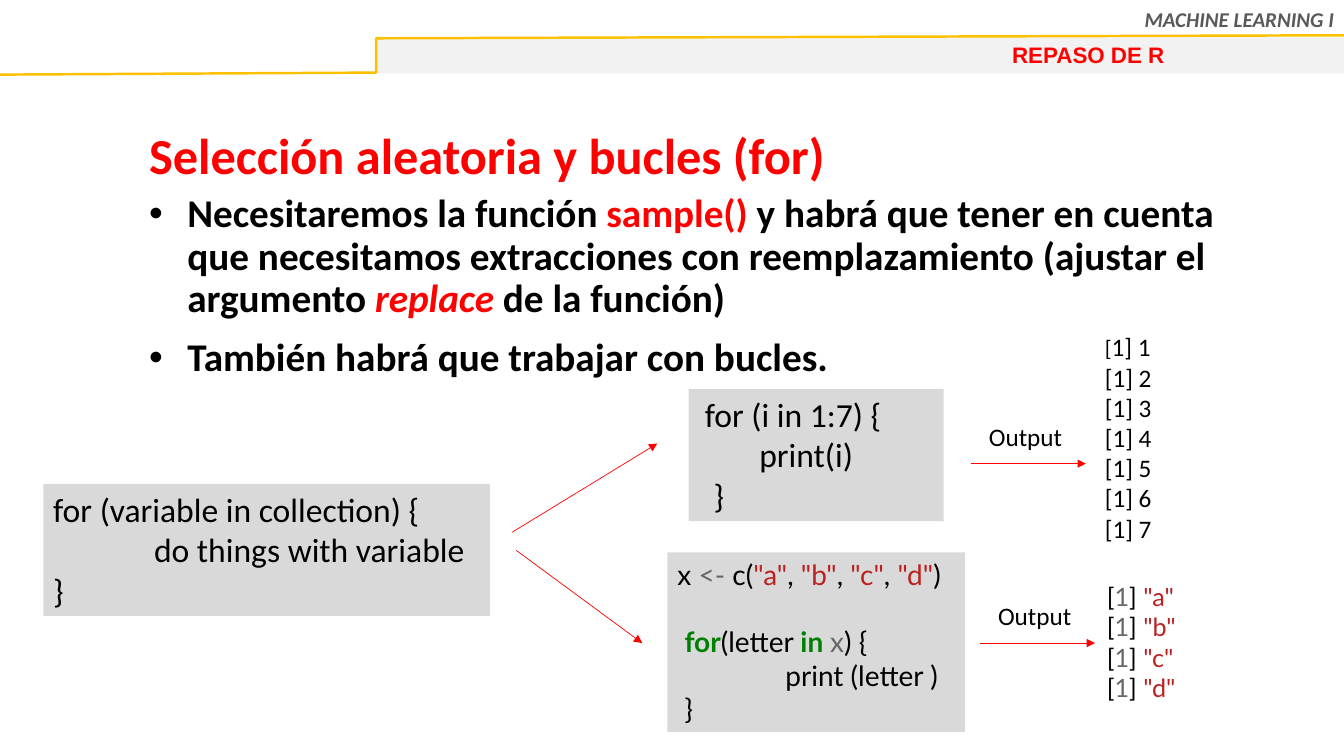
from dataclasses import dataclass, field
from typing import NamedTuple, Optional

from lxml.etree import SubElement
from pptx import Presentation
from pptx.dml.color import RGBColor
from pptx.enum.shapes import MSO_CONNECTOR as CONNECTOR, MSO_SHAPE as SHAPE
from pptx.enum.text import MSO_ANCHOR as ANCHOR, MSO_AUTO_SIZE as AUTO_SIZE, PP_ALIGN as ALIGN
from pptx.oxml.ns import qn
from pptx.util import Inches, Pt


@dataclass(frozen=True)
class Theme:
    black: str = "000000"
    red: str = "FF0000"
    gold: str = "FFC000"
    band: str = "F2F2F2"
    panel: str = "D9D9D9"
    course: str = "595959"
    muted: str = "666666"
    string: str = "BB2121"
    keyword: str = "008000"
    body_font: str = "Calibri"
    title_font: str = "Arial"
    code_font: str = "Lato"
    course_size: int = 15
    title_size: int = 16
    heading_size: int = 36
    bullet_size: int = 28
    code_size: int = 24
    letters_size: int = 20
    output_size: int = 18


THEME = Theme()


class Span(NamedTuple):
    text: str
    color: str = THEME.black
    bold: bool = False
    italic: bool = False
    size: Optional[int] = None


class Line(NamedTuple):
    spans: list[Span]
    bullet: bool = False
    spacing: Optional[float] = None


@dataclass
class Block:
    at: tuple[float, float, float, float]
    lines: list[Line]
    size: int
    font: str = THEME.body_font
    fill: Optional[str] = None
    frame: dict = field(default_factory=dict)
    align: ALIGN = ALIGN.LEFT


class Arrow(NamedTuple):
    start: tuple[float, float]
    end: tuple[float, float]


def set_all(target: object, values: dict) -> None:
    for name, value in values.items():
        setattr(target, name, value)


def add_bullet(paragraph) -> None:
    properties = paragraph._p.get_or_add_pPr()
    properties.set("marL", str(Inches(0.38)))
    properties.set("indent", str(-Inches(0.38)))
    SubElement(properties, qn("a:buFont"), typeface="Arial")
    SubElement(properties, qn("a:buChar"), char="•")


def write_text(shape, block: Block) -> None:
    frame = shape.text_frame
    set_all(frame, {"word_wrap": True, "auto_size": AUTO_SIZE.NONE,
                    "vertical_anchor": ANCHOR.TOP, **block.frame})
    for index, line in enumerate(block.lines):
        paragraph = frame.add_paragraph() if index else frame.paragraphs[0]
        paragraph._p.get_or_add_pPr().set("defTabSz", str(Inches(1)))
        if line.bullet:
            add_bullet(paragraph)
            set_all(paragraph, {"space_before": Pt(6), "space_after": Pt(6)})
        set_all(paragraph, {"alignment": block.align, "line_spacing": line.spacing})
        for span in line.spans:
            run = paragraph.add_run()
            run.text = span.text
            set_all(run.font, {"name": block.font, "size": Pt(span.size or block.size),
                               "bold": span.bold, "italic": span.italic})
            run.font.color.rgb = RGBColor.from_string(span.color)
        if not line.spans:
            SubElement(paragraph._p, qn("a:endParaRPr"), sz=str(block.size * 100))


def add_panel(slide, at: tuple[float, float, float, float], fill: str):
    panel = slide.shapes.add_shape(SHAPE.RECTANGLE, *map(Inches, at))
    panel.shadow.inherit = False
    panel.fill.solid()
    panel.fill.fore_color.rgb = RGBColor.from_string(fill)
    panel.line.fill.background()
    return panel


def add_block(slide, block: Block) -> None:
    if block.fill:
        shape = add_panel(slide, block.at, block.fill)
    else:
        shape = slide.shapes.add_textbox(*map(Inches, block.at))
    write_text(shape, block)


def add_arrow(slide, arrow: Arrow) -> None:
    connector = slide.shapes.add_connector(
        CONNECTOR.STRAIGHT, *map(Inches, arrow.start + arrow.end))
    connector.line.color.rgb = RGBColor.from_string(THEME.red)
    connector.line.width = Pt(0.5)
    SubElement(connector.line._get_or_add_ln(), qn("a:tailEnd"), type="triangle")
    SubElement(connector._element.spPr, qn("a:effectLst"))


def add_header(slide) -> None:
    add_panel(slide, (3.73, 0.37, 9.6, 0.36), THEME.band)
    corners = [(Inches(x), Inches(y))
               for x, y in ((13.33, 0.35), (3.73, 0.38), (3.73, 0.72), (0, 0.74))]
    builder = slide.shapes.build_freeform(*corners[0])
    builder.add_line_segments(corners[1:], close=False)
    rule = builder.convert_to_shape()
    rule.shadow.inherit = False
    rule.fill.background()
    rule.line.color.rgb = RGBColor.from_string(THEME.gold)
    rule.line.width = Pt(1.75)


def plain(*texts: str) -> list[Line]:
    return [Line([Span(text)]) for text in texts]


def letter_output(letter: str) -> Line:
    return Line([Span("["), Span("1", THEME.muted), Span("] "),
                 Span(f'"{letter}"', THEME.string)])


LETTERS = "abcd"

# Header texts
COURSE = Block((7.82, 0.02, 5.51, 0.35),
               [Line([Span("MACHINE LEARNING I", THEME.course, True, True)])],
               THEME.course_size, align=ALIGN.RIGHT)
TITLE = Block((4.46, 0.36, 7.11, 0.37), [Line([Span("REPASO DE R", THEME.red, True)])],
              THEME.title_size, THEME.title_font, align=ALIGN.RIGHT,
              frame={"margin_left": Inches(0.02), "margin_right": Inches(0.02),
                     "vertical_anchor": ANCHOR.MIDDLE})

# Explanation
EXPLANATION = Block((1.38, 1.25, 10.89, 0.52), [
    Line([Span("Selección aleatoria y bucles (for)", THEME.red, True, size=THEME.heading_size)],
         spacing=0.9),
    Line([Span("Necesitaremos la función ", bold=True),
          Span("sample() ", THEME.red, True),
          Span("y habrá que tener en cuenta que necesitamos extracciones con "
               "reemplazamiento (ajustar el argumento ", bold=True),
          Span("replace ", THEME.red, True, True),
          Span("de la función)", bold=True)], bullet=True, spacing=0.9),
    Line([Span("También habrá que trabajar con bucles.", bold=True)], bullet=True, spacing=0.9),
], THEME.bullet_size)

# Code panels
LOOP_SYNTAX = Block((0.43, 4.8, 4.43, 1.31),
                    plain("for (variable in collection) {", "\tdo things with variable", "}"),
                    THEME.code_size, fill=THEME.panel)
NUMBER_LOOP = Block((6.83, 3.86, 2.53, 1.31), [
    Line([Span(" ", bold=True, size=THEME.letters_size), Span("for (i in 1:7) {")]),
    *plain("        print(i)", "  }"),
], THEME.code_size, fill=THEME.panel)

letter_vector = [Span("x "), Span("<- ", THEME.muted), Span("c(")]
for position, letter in enumerate(LETTERS):
    if position:
        letter_vector.append(Span(", "))
    letter_vector.append(Span(f'"{letter}"', THEME.string))
letter_vector.append(Span(")"))
LETTER_LOOP = Block((6.62, 5.48, 2.95, 1.78), [
    Line(letter_vector),
    Line([]),
    Line([Span(" "), Span("for", THEME.keyword, True), Span("(letter "),
          Span("in ", THEME.keyword, True), Span("x", THEME.muted), Span(") {")]),
    *plain("\t print (letter )", " }"),
], THEME.letters_size, THEME.code_font, THEME.panel)

# Results
NUMBER_RESULT = Block((10.86, 3.24, 1.08, 2.22), [
    Line([Span("[", size=THEME.title_size), Span("1] 1")]),
    *plain(*(f"[1] {number}" for number in range(2, 8))),
], THEME.output_size)
LETTER_RESULT = Block((10.88, 5.72, 1.53, 1.31), [letter_output(letter) for letter in LETTERS],
                      THEME.output_size, THEME.code_font)
OUTPUT_LABELS = [Block((left, top, 1.41, 0.4), plain("Output"), THEME.output_size)
                 for left, top in ((9.71, 4.13), (9.8, 5.91))]

ARROWS = [
    Arrow((9.63, 4.6), (10.77, 4.6)),
    Arrow((9.72, 6.38), (10.86, 6.38)),
    Arrow((5.08, 5.28), (6.52, 4.4)),
    Arrow((5.12, 5.46), (6.37, 6.38)),
]


def main() -> None:
    deck = Presentation()
    set_all(deck, {"slide_width": Inches(13.33), "slide_height": Inches(7.5)})
    slide = deck.slides.add_slide(deck.slide_layouts[5])
    add_header(slide)
    add_block(slide, COURSE)

    # Title, raised above the header band
    title = slide.shapes.title
    set_all(title, dict(zip(("left", "top", "width", "height"), map(Inches, TITLE.at))))
    write_text(title, TITLE)
    slide.shapes._spTree.append(title._element)

    for block in (EXPLANATION, LOOP_SYNTAX, NUMBER_LOOP, NUMBER_RESULT,
                  LETTER_LOOP, LETTER_RESULT, *OUTPUT_LABELS):
        add_block(slide, block)
    for arrow in ARROWS:
        add_arrow(slide, arrow)
    deck.save("out.pptx")


if __name__ == "__main__":
    main()
